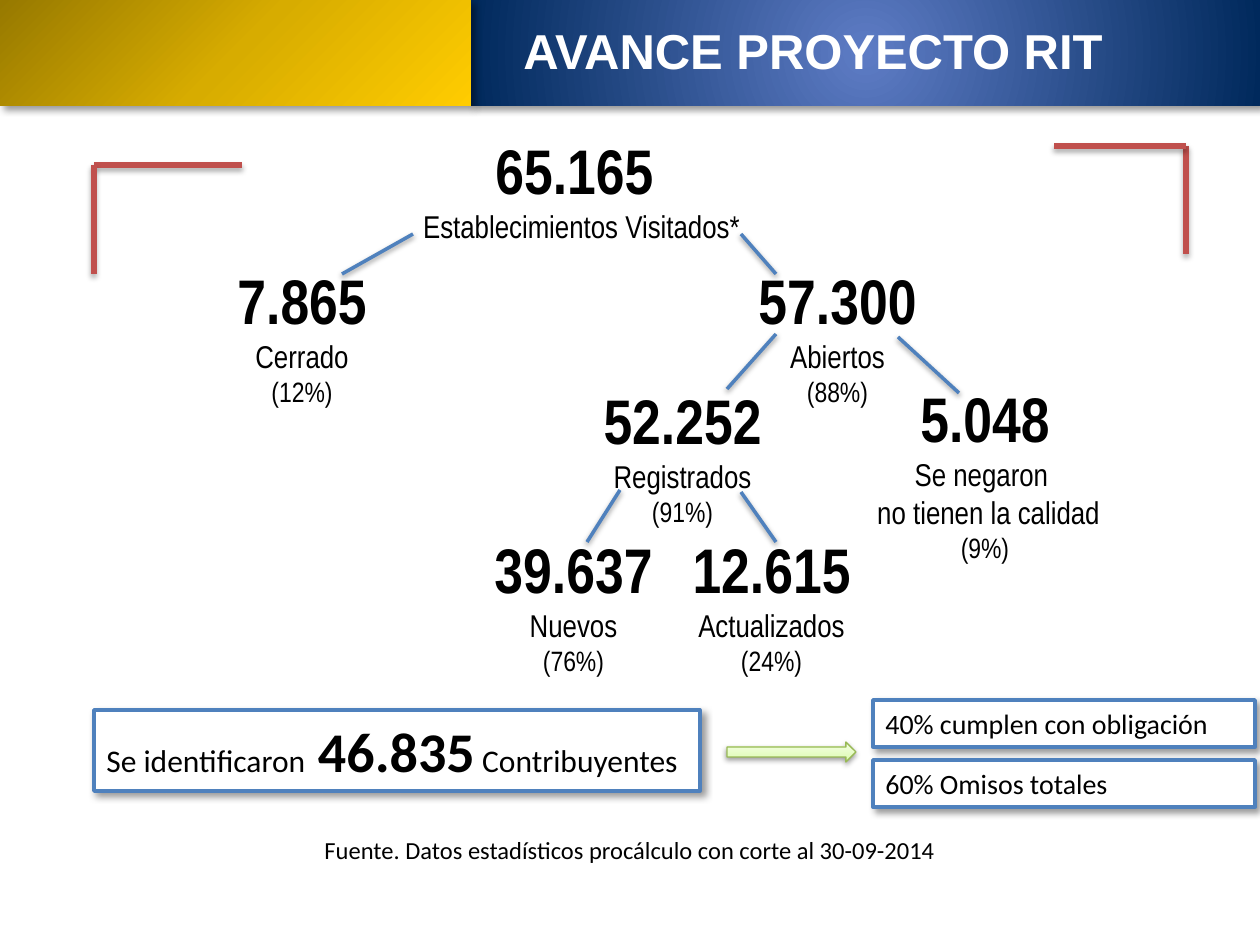
from pptx import Presentation
from pptx.dml.color import RGBColor
from pptx.enum.shapes import MSO_CONNECTOR, MSO_SHAPE
from pptx.enum.text import MSO_ANCHOR, MSO_AUTO_SIZE, PP_ALIGN
from pptx.oxml import parse_xml
from pptx.oxml.ns import nsdecls
from pptx.util import Emu, Pt

EMU_PER_INCH = 914400
PX_PER_INCH = 126

COLORS = {
    "black": "000000",
    "white": "FFFFFF",
    "blue": "4F81BD",
    "red": "C0504D",
    "green": "98B955",
}
HEADER_BLUE = [(0, "5E7CC5"), (100, "00295C")]
HEADER_GOLD = [(0, "977900"), (50, "D7AC00"), (100, "FFCC00")]
ARROW_GREEN = [(0, "DAFDA7"), (35, "E4FCC2"), (100, "F5FFE7")]

CENTER_FOCUS = '<a:path path="circle"><a:fillToRect l="50000" t="50000" r="50000" b="50000"/></a:path>'
CORNER_FOCUS = '<a:path path="circle"><a:fillToRect r="100000" b="100000"/></a:path>'
UPWARD = '<a:lin ang="16200000" scaled="0"/>'

BOX_SHADOW = (40, 4, 3, 45)
LINE_SHADOW = (38, 3.1, 1.6, 90)
CORNER_SHADOW = (35, 3.1, 1.8, 90)

NODES = [
    ((408, 125, 347, 127), "65.165 ", ["Establecimientos Visitados*"], None),
    ((224, 255, 156, 161), "7.865", ["Cerrado"], "(12%)"),
    ((745, 255, 185, 161), "57.300", ["Abiertos"], "(88%)"),
    ((590, 375, 185, 161), "52.252", ["Registrados"], "(91%)"),
    ((856, 373, 258, 199), "5.048", ["Se negaron ", " no tienen la calidad"], "(9%)"),
    ((481, 524, 185, 161), "39.637", ["Nuevos"], "(76%)"),
    ((679, 524, 185, 161), "12.615", ["Actualizados"], "(24%)"),
]
BRANCHES = [
    (413, 234, 342, 274),
    (776, 274, 741, 234),
    (776, 334, 727, 389),
    (898, 337, 959, 393),
    (741, 492, 776, 542),
    (620, 490, 587, 542),
]
CORNERS = [
    (94, 165, 242, 165),
    (94, 165, 94, 274),
    (1186, 146, 1186, 254),
    (1186, 146, 1054, 146),
]


def px(value):
    return Emu(round(value * EMU_PER_INCH / PX_PER_INCH))


def rgb(name):
    return RGBColor.from_string(COLORS[name])


def set_font(font, name, size, color="black", bold=False):
    font.name = name
    font.size = Pt(size)
    font.bold = bold
    font.color.rgb = rgb(color)


def add_shadow(shape, opacity, blur, distance, angle):
    shape._element.spPr.append(parse_xml(
        f'<a:effectLst {nsdecls("a")}>'
        f'<a:outerShdw blurRad="{Pt(blur)}" dist="{Pt(distance)}" dir="{angle * 60000}" rotWithShape="0">'
        f'<a:srgbClr val="{COLORS["black"]}"><a:alpha val="{opacity * 1000}"/></a:srgbClr>'
        '</a:outerShdw></a:effectLst>'
    ))


def set_gradient(shape, stops, direction):
    stop_list = "".join(
        f'<a:gs pos="{position * 1000}"><a:srgbClr val="{color}"/></a:gs>'
        for position, color in stops
    )
    gradient = parse_xml(
        f'<a:gradFill {nsdecls("a")} rotWithShape="1"><a:gsLst>{stop_list}</a:gsLst>{direction}</a:gradFill>'
    )
    shape._element.spPr.prstGeom.addnext(gradient)


def add_gradient_shape(slide, kind, box, stops, direction, shadow, line_color=None):
    shape = slide.shapes.add_shape(kind, *map(px, box))
    set_gradient(shape, stops, direction)
    if line_color:
        shape.line.color.rgb = rgb(line_color)
        shape.line.width = Pt(0.75)
    else:
        shape.line.fill.background()
    add_shadow(shape, *shadow)


def add_line(slide, ends, color, width, shadow):
    connector = slide.shapes.add_connector(MSO_CONNECTOR.STRAIGHT, *map(px, ends))
    connector.line.color.rgb = rgb(color)
    connector.line.width = Pt(width)
    add_shadow(connector, *shadow)


def add_text(slide, box):
    text_frame = slide.shapes.add_textbox(*map(px, box)).text_frame
    text_frame.word_wrap = False
    text_frame.auto_size = MSO_AUTO_SIZE.SHAPE_TO_FIT_TEXT
    return text_frame


def add_node(slide, box, number, labels, percent):
    text_frame = add_text(slide, box)
    lines = [(number, 36)] + [(label, 18) for label in labels]
    if percent:
        lines.append((percent, 16))
    text_frame.text = "\n".join(text for text, size in lines)
    for paragraph, (text, size) in zip(text_frame.paragraphs, lines):
        paragraph.alignment = PP_ALIGN.CENTER
        set_font(paragraph.runs[0].font, "Arial Narrow", size, bold=size == 36)


def add_framed_text(slide, box, runs, wrap=True):
    shape = slide.shapes.add_shape(MSO_SHAPE.RECTANGLE, *map(px, box))
    shape.fill.solid()
    shape.fill.fore_color.rgb = rgb("white")
    shape.line.color.rgb = rgb("blue")
    shape.line.width = Pt(2)
    add_shadow(shape, *BOX_SHADOW)
    text_frame = shape.text_frame
    text_frame.word_wrap = wrap
    text_frame.auto_size = MSO_AUTO_SIZE.SHAPE_TO_FIT_TEXT
    text_frame.vertical_anchor = MSO_ANCHOR.TOP
    paragraph = text_frame.paragraphs[0]
    paragraph.alignment = PP_ALIGN.LEFT
    for text, size, bold in runs:
        run = paragraph.add_run()
        run.text = text
        set_font(run.font, "Calibri", size, bold=bold)


def add_title(slide, text):
    title = slide.shapes.title
    slide.shapes._spTree.append(title._element)
    title.left, title.top, title.width, title.height = map(px, (408, 16, 810, 103))
    text_frame = title.text_frame
    text_frame.text = text
    text_frame.word_wrap = True
    text_frame.auto_size = MSO_AUTO_SIZE.NONE
    text_frame.vertical_anchor = MSO_ANCHOR.TOP
    text_frame.margin_top = px(11)
    paragraph = text_frame.paragraphs[0]
    paragraph.alignment = PP_ALIGN.CENTER
    paragraph.line_spacing = 0.9
    set_font(paragraph.runs[0].font, "Arial", 28, "white", True)


def add_source_note(slide, text):
    text_frame = add_text(slide, (312, 829, 648, 43))
    text_frame.text = text
    set_font(text_frame.paragraphs[0].runs[0].font, "Calibri", 14)


def main():
    presentation = Presentation()
    presentation.slide_width = px(1260)
    presentation.slide_height = px(945)
    slide = presentation.slides.add_slide(presentation.slide_layouts[5])

    add_gradient_shape(slide, MSO_SHAPE.RECTANGLE, (471, 0, 789, 106), HEADER_BLUE, CENTER_FOCUS, BOX_SHADOW)
    add_gradient_shape(slide, MSO_SHAPE.RECTANGLE, (0, 0, 471, 106), HEADER_GOLD, CORNER_FOCUS, BOX_SHADOW)
    add_title(slide, "AVANCE PROYECTO RIT")

    for node in NODES:
        add_node(slide, *node)
    for ends in BRANCHES:
        add_line(slide, ends, "blue", 2, LINE_SHADOW)
    for ends in CORNERS:
        add_line(slide, ends, "red", 3, CORNER_SHADOW)

    summary = [("Se identificaron", 18, False), (" 46.835", 32, True), (" Contribuyentes", 18, False)]
    add_framed_text(slide, (94, 710, 606, 81), summary, wrap=False)
    add_gradient_shape(
        slide, MSO_SHAPE.RIGHT_ARROW, (727, 742, 129, 20), ARROW_GREEN, UPWARD, LINE_SHADOW, "green"
    )
    for index, text in enumerate(["40% cumplen con obligación", "60% Omisos totales"]):
        add_framed_text(slide, (873, 700 + 60 * index, 382, 47), [(text, 16, False)])
    add_source_note(slide, "Fuente. Datos estadísticos procálculo con corte al 30-09-2014")

    presentation.save("out.pptx")


if __name__ == "__main__":
    main()
